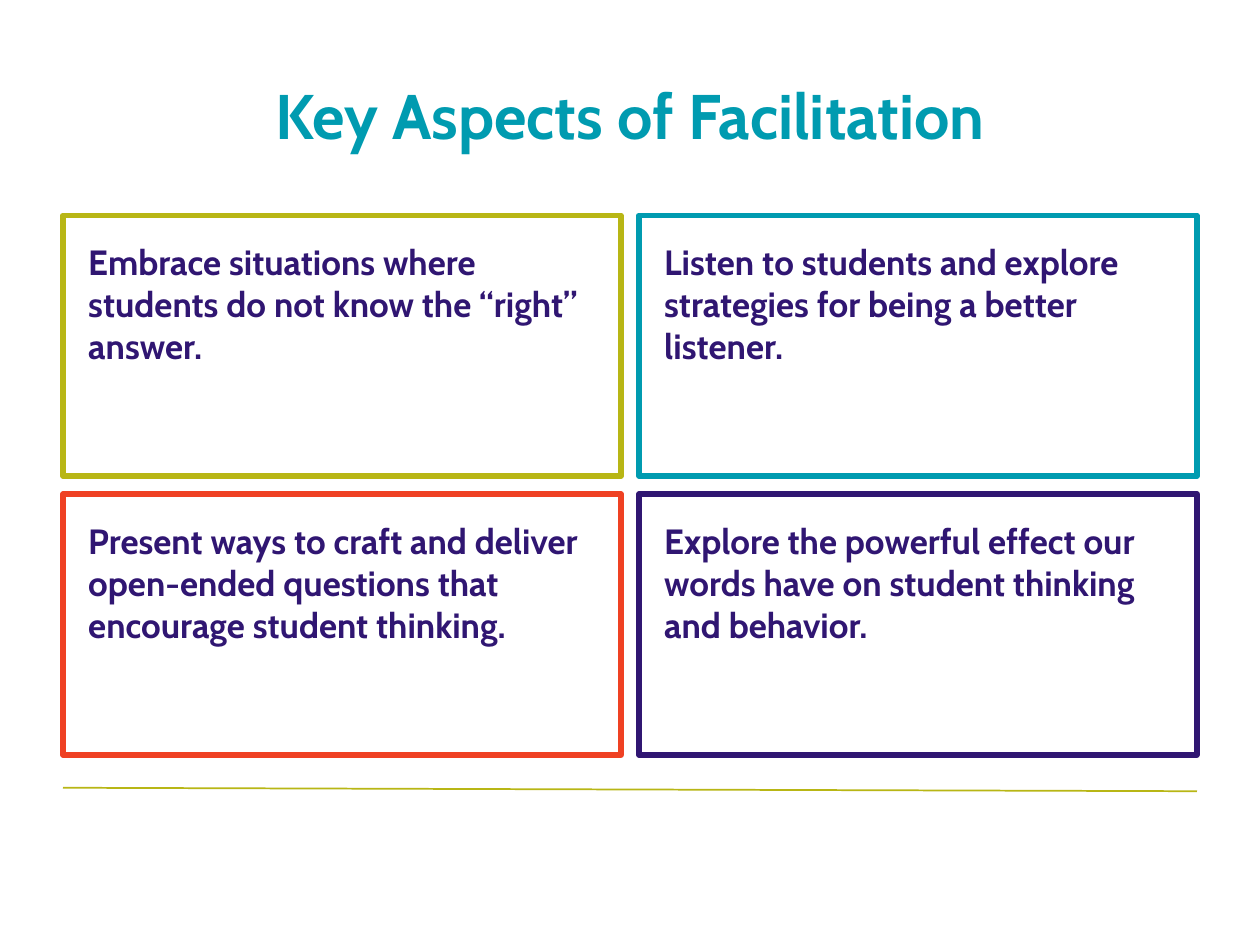
"""Build the slide on key aspects of facilitation."""
from lxml.etree import SubElement
from pptx import Presentation
from pptx.dml.color import RGBColor
from pptx.enum.shapes import MSO_CONNECTOR as LINK, MSO_SHAPE as SHAPE
from pptx.enum.text import MSO_ANCHOR as ANCHOR, PP_ALIGN as ALIGN
from pptx.oxml.ns import qn
from pptx.util import Cm, Pt

TEAL, LIME, RED, NAVY = "009BB0", "B8B615", "EF4123", "301672"


def paint(item, tone):
    item.rgb = RGBColor.from_string(tone)


def write(shape, text, size, tone, align, anchor, pad_x, pad_y):
    frame = shape.text_frame
    frame.word_wrap = True
    frame.vertical_anchor = anchor
    frame.margin_left = frame.margin_right = Cm(pad_x)
    frame.margin_top = frame.margin_bottom = Cm(pad_y)
    para = frame.paragraphs[0]
    para.alignment = align
    run = para.add_run()
    run.text = text
    run.font.name = "Cabin"
    run.font.size = Pt(size)
    run.font.bold = True
    paint(run.font.color, tone)


deck = Presentation()
deck.slide_width, deck.slide_height = Cm(25.4), Cm(19.05)
slide = deck.slides.add_slide(deck.slide_layouts[5])
shapes = slide.shapes

title = shapes.title
title.left, title.top = Cm(1.27), Cm(0.86)
title.width, title.height = Cm(22.86), Cm(2.9)
write(title, "Key Aspects of Facilitation", size=36, tone=TEAL,
      align=ALIGN.CENTER, anchor=ANCHOR.MIDDLE, pad_x=0.25, pad_y=0.13)

rule = shapes.add_connector(LINK.STRAIGHT, Cm(1.27), Cm(15.88), Cm(24.13), Cm(15.95))
rule.line.width = Pt(1)
paint(rule.line.color, LIME)
SubElement(rule._element.spPr, qn("a:effectLst"))

cards = [
    (LIME, "Embrace situations where students do not know the “right” answer."),
    (TEAL, "Listen to students and explore strategies for being a better listener."),
    (RED, "Present ways to craft and deliver open-ended questions that encourage student thinking."),
    (NAVY, "Explore the powerful effect our words have on student thinking and behavior."),
]
wide, high, gap = 11.25, 5.26, 0.36
for i, (tone, text) in enumerate(cards):
    row, col = divmod(i, 2)
    left = 1.27 + col * (wide + gap)
    top = 4.34 + row * (high + gap)
    card = shapes.add_shape(SHAPE.RECTANGLE, Cm(left), Cm(top), Cm(wide), Cm(high))
    card.shadow.inherit = False
    card.fill.solid()
    paint(card.fill.fore_color, "FFFFFF")
    card.line.width = Pt(3)
    paint(card.line.color, tone)
    write(card, text, size=20, tone=NAVY, align=ALIGN.LEFT, anchor=ANCHOR.TOP,
          pad_x=0.51, pad_y=0.51)

deck.save("out.pptx")
